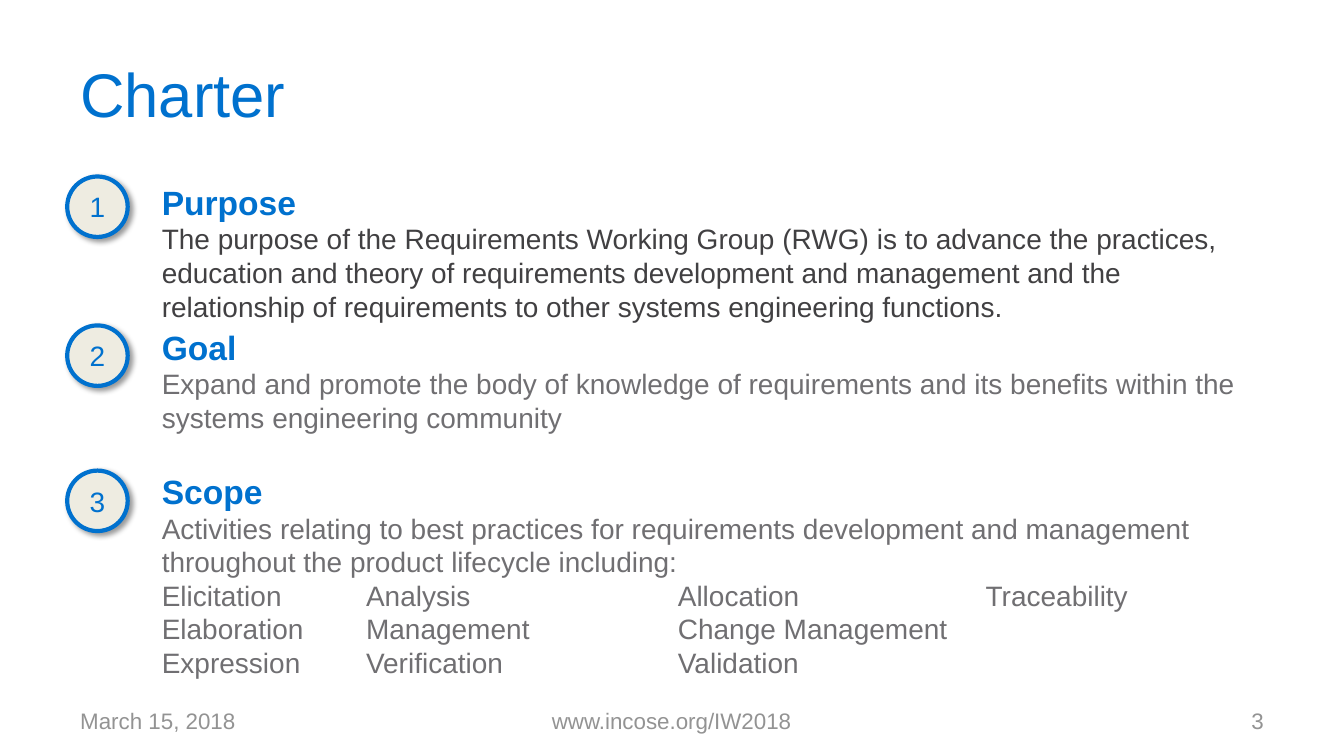
import pptx
import pptx.dml.color
import pptx.enum.shapes
import pptx.enum.text
import pptx.oxml
import pptx.oxml.ns
import pptx.util
from lxml import etree

ALIGN = pptx.enum.text.PP_ALIGN
BLUE, CREAM, DARK, GREY, PALE = "0071CE", "EEECE1", "414042", "706F72", "939393"
GRID = 20  # the slide is 20 columns by 20 rows


def colour(hex_value):
    return pptx.dml.color.RGBColor.from_string(hex_value)


class CharterSlide:
    font = "Arial"

    def __init__(self, deck):
        self.column = deck.slide_width / GRID
        self.row = deck.slide_height / GRID
        self.slide = deck.slides.add_slide(deck.slide_layouts[6])

    def place(self, left, top, width, height):
        return (round(left * self.column), round(top * self.row),
                round(width * self.column), round(height * self.row))

    def add_text(self, paragraph, text, size, ink, bold=False, align=ALIGN.LEFT):
        paragraph.alignment = align
        run = paragraph.add_run()
        run.text = text
        run.font.name = self.font
        run.font.size = pptx.util.Pt(size)
        run.font.bold = bold
        run.font.color.rgb = colour(ink)

    def frame(self, area):
        frame = self.slide.shapes.add_textbox(*self.place(*area)).text_frame
        frame.word_wrap = True
        return frame

    def label(self, area, text, size, ink, align=ALIGN.LEFT):
        frame = self.frame(area)
        frame.vertical_anchor = pptx.enum.text.MSO_ANCHOR.MIDDLE
        frame.margin_left = frame.margin_right = pptx.util.Inches(0.13)
        frame.margin_top = frame.margin_bottom = pptx.util.Inches(0.07)
        self.add_text(frame.paragraphs[0], text, size, ink, align=align)

    def section(self, area, heading, body, ink, activities=()):
        frame = self.frame(area)
        self.add_text(frame.paragraphs[0], heading, 24, BLUE, bold=True)
        self.add_text(frame.add_paragraph(), body, 20, ink)
        for names in activities:
            line = frame.add_paragraph()
            self.tabs(line, (3.04, 7.68, 12.26))
            self.add_text(line, "\t".join(names), 20, ink)

    def tabs(self, paragraph, stops):
        properties = paragraph._p.get_or_add_pPr()
        tab_list = etree.SubElement(properties, pptx.oxml.ns.qn("a:tabLst"))
        for stop in stops:
            etree.SubElement(tab_list, pptx.oxml.ns.qn("a:tab"),
                             pos=str(round(stop * self.column)), algn="l")

    def badge(self, area, number):
        circle = self.slide.shapes.add_shape(
            pptx.enum.shapes.MSO_SHAPE.OVAL, *self.place(*area))
        circle.fill.solid()
        circle.fill.fore_color.rgb = colour(CREAM)
        circle.line.color.rgb = colour(BLUE)
        circle.line.width = pptx.util.Pt(3)
        self.drop_shadow(circle)
        frame = circle.text_frame
        frame.vertical_anchor = pptx.enum.text.MSO_ANCHOR.MIDDLE
        self.add_text(frame.paragraphs[0], str(number), 20, BLUE, align=ALIGN.CENTER)

    def drop_shadow(self, shape):
        shape.shadow.inherit = False
        effects = shape._element.spPr.find(pptx.oxml.ns.qn("a:effectLst"))
        effects.append(pptx.oxml.parse_xml(
            f'<a:outerShdw {pptx.oxml.ns.nsdecls("a")} blurRad="{pptx.util.Pt(4)}" '
            f'dist="{pptx.util.Pt(3)}" dir="2700000" algn="tl" rotWithShape="0">'
            '<a:srgbClr val="000000"><a:alpha val="40000"/></a:srgbClr></a:outerShdw>'))


def main():
    deck = pptx.Presentation()
    deck.slide_width = pptx.util.Inches(13.34)
    deck.slide_height = pptx.util.Inches(7.5)
    charter = CharterSlide(deck)

    # Title
    charter.label((1, 0.8, 18, 3.33), "Charter", 44, BLUE)

    # Numbered sections: badge row, text row, width, height, then the wording
    sections = [
        (4.67, 4.67, 16.33, 4.03, "Purpose",
         "The purpose of the Requirements Working Group (RWG) is to advance the "
         "practices, education and theory of requirements development and management "
         "and the relationship of requirements to other systems engineering functions.",
         DARK, ()),
        (8.61, 8.51, 16.75, 3.15, "Goal",
         "Expand and promote the body of knowledge of requirements and its benefits "
         "within the systems engineering community", GREY, ()),
        (12.45, 12.32, 16.75, 5.84, "Scope",
         "Activities relating to best practices for requirements development and "
         "management throughout the product lifecycle including:", GREY,
         (("Elicitation", "Analysis", "Allocation", "Traceability"),
          ("Elaboration", "Management", "Change Management"),
          ("Expression", "Verification", "Validation"))),
    ]
    for number, (badge_row, text_row, width, height, *wording) in enumerate(sections, 1):
        charter.section((2.26, text_row, width, height), *wording)
        charter.badge((1, badge_row, 0.9, 1.6), number)

    # Footer
    for left, width, text, align in (
            (1, 4.67, "March 15, 2018", ALIGN.LEFT),
            (6.83, 6.33, "www.incose.org/IW2018", ALIGN.CENTER),
            (14.33, 4.67, "3", ALIGN.RIGHT)):
        charter.label((left, 18.53, width, 1.07), text, 16, PALE, align)

    deck.save("out.pptx")


if __name__ == "__main__":
    main()
